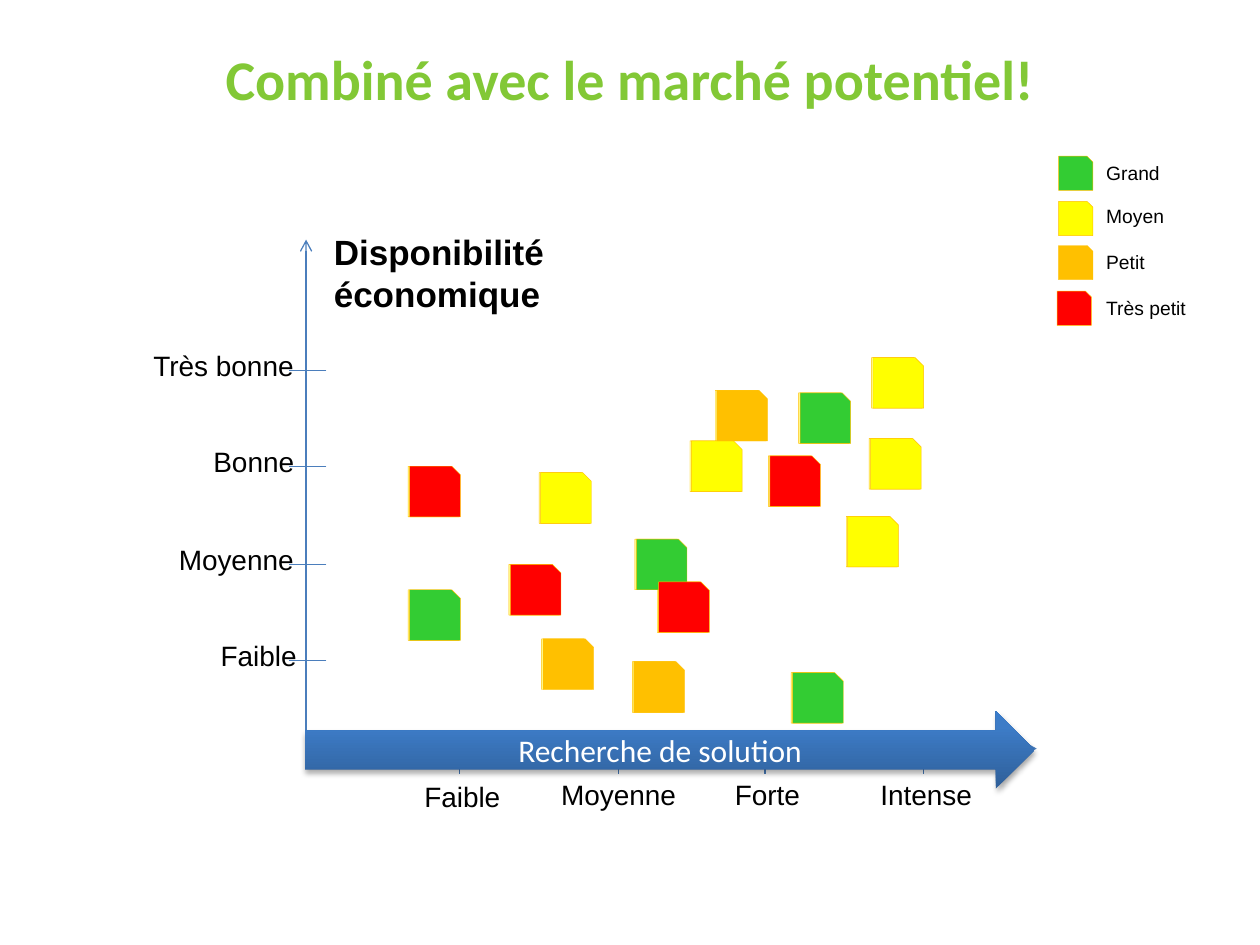
from copy import deepcopy

from lxml import etree
from pptx import Presentation
from pptx.dml.color import RGBColor
from pptx.enum.shapes import MSO_CONNECTOR, MSO_SHAPE
from pptx.enum.text import MSO_ANCHOR, PP_ALIGN
from pptx.oxml import parse_xml
from pptx.oxml.ns import nsdecls, qn
from pptx.util import Cm, Pt

SNIPPED = MSO_SHAPE.SNIP_1_RECTANGLE
RIGHT_ARROW = MSO_SHAPE.RIGHT_ARROW
STRAIGHT = MSO_CONNECTOR.STRAIGHT
MIDDLE = MSO_ANCHOR.MIDDLE
LEFT, CENTER, RIGHT = PP_ALIGN.LEFT, PP_ALIGN.CENTER, PP_ALIGN.RIGHT

TITLE_GREEN = RGBColor(0x82, 0xC8, 0x36)
PALE = RGBColor(0xFF, 0xFF, 0x99)
GREEN = RGBColor(0x33, 0xCC, 0x33)
YELLOW = RGBColor(0xFF, 0xFF, 0x00)
ORANGE = RGBColor(0xFF, 0xC0, 0x00)
RED = RGBColor(0xFF, 0x00, 0x00)
BLUE = RGBColor(0x4B, 0x7E, 0xBC)
BLACK = RGBColor(0x00, 0x00, 0x00)
WHITE = RGBColor(0xFF, 0xFF, 0xFF)
ARROW_STOPS = [
    (0, RGBColor(0x2F, 0x5F, 0x99)),
    (0.8, RGBColor(0x3D, 0x7C, 0xC7)),
    (1, RGBColor(0x3A, 0x7C, 0xCB)),
]


def add_note(group, left, top, size, color):
    note = group.shapes.add_shape(SNIPPED, Cm(left), Cm(top), Cm(size), Cm(size))
    note.shadow.inherit = False
    note.fill.solid()
    note.fill.fore_color.rgb = color
    note.line.color.rgb = ORANGE
    note.line.width = Pt(0.25)


def add_label(shapes, lines, left, top, width, height, size, align=LEFT, bold=False):
    box = shapes.add_textbox(Cm(left), Cm(top), Cm(width), Cm(height))
    box.text_frame.word_wrap = True
    paragraph = box.text_frame.paragraphs[0]
    paragraph.alignment = align
    paragraph.space_after = Pt(6)
    for index, line in enumerate(lines):
        if index:
            paragraph.add_line_break()
        run = paragraph.add_run()
        run.text = line
        run.font.name = "Arial"
        run.font.size = Pt(size)
        run.font.bold = bold
        run.font.color.rgb = BLACK


presentation = Presentation()
presentation.slide_width, presentation.slide_height = Cm(25.4), Cm(19.05)
slide = presentation.slides.add_slide(presentation.slide_layouts[5])
shapes = slide.shapes

# Title
title = shapes.title
title.left, title.top, title.width, title.height = Cm(1.27), Cm(0.76), Cm(22.86), Cm(1.63)
title.text_frame.vertical_anchor = MIDDLE
paragraph = title.text_frame.paragraphs[0]
paragraph.alignment = CENTER
run = paragraph.add_run()
run.text = "Combiné avec le marché potentiel!"
run.font.name = "Calibri"
run.font.size = Pt(32)
run.font.bold = True
run.font.color.rgb = TITLE_GREEN

# Notes on the map: left, top, colour by market size
notes = [
    (13.94, 8.89, YELLOW), (16.13, 7.92, GREEN), (15.52, 9.19, RED),
    (12.83, 10.87, GREEN), (17.09, 10.41, YELLOW), (17.55, 8.84, YELLOW),
    (8.26, 9.4, RED), (8.26, 11.89, GREEN), (10.29, 11.38, RED),
    (14.45, 7.87, ORANGE), (10.9, 9.53, YELLOW), (12.78, 13.34, ORANGE),
    (13.28, 11.73, RED), (10.95, 12.88, ORANGE), (17.6, 7.21, YELLOW),
    (15.98, 13.56, GREEN),
]
NOTE_SIZE = 1.02

# Pale notes lying just behind the coloured ones
pale_group = shapes.add_group_shape()
for left, top, color in notes:
    add_note(pale_group, left - 0.03, top, NOTE_SIZE, PALE)

# Axes and ticks
ORIGIN_X, ORIGIN_Y = 6.17, 15.09
x_ticks = [9.27, 12.47, 15.42, 18.62]
y_ticks = [13.31, 11.38, 9.4, 7.47]
lines = [
    (ORIGIN_X, ORIGIN_Y, 20.9, ORIGIN_Y, True),
    (ORIGIN_X, ORIGIN_Y, ORIGIN_X, 4.83, True),
]
lines += [(x, 14.73, x, 15.6, False) for x in x_ticks]
lines += [(6.58, y, 5.82, y, False) for y in y_ticks]
for x1, y1, x2, y2, has_arrow in lines:
    connector = shapes.add_connector(STRAIGHT, Cm(x1), Cm(y1), Cm(x2), Cm(y2))
    connector.line.color.rgb = BLUE
    connector.line.width = Pt(0.75)
    properties = connector._element.spPr
    if has_arrow:
        etree.SubElement(properties.find(qn("a:ln")), qn("a:tailEnd"), type="arrow")
    etree.SubElement(properties, qn("a:effectLst"))

# Axis labels
add_label(shapes, ["Disponibilité", "économique"], 6.48, 4.52, 11.07, 2.9, 20, bold=True)
x_labels = [("Faible", 6.68, 15.6), ("Moyenne", 9.83, 15.54),
            ("Forte", 12.83, 15.54), ("Intense", 16.03, 15.54)]
for text, left, top in x_labels:
    add_label(shapes, [text], left, top, 5.28, 1.32, 16, CENTER)
y_labels = [("Faible", 3.23, 3), ("Moyenne", 2.46, 3.71),
            ("Bonne", 3.18, 3), ("Très bonne", 2.16, 4.01)]
for (text, left, width), tick in zip(y_labels, y_ticks):
    add_label(shapes, [text], left, tick - 0.56, width, 1.32, 16, RIGHT)

# Coloured notes
note_group = shapes.add_group_shape()
for left, top, color in notes:
    add_note(note_group, left, top, NOTE_SIZE, color)

# Legend: text, colour, note left and top, text top and width
legend_group = shapes.add_group_shape()
legend = [
    ("Grand", GREEN, 21.34, 3.15, 3.12, 2.06),
    ("Moyen", YELLOW, 21.34, 4.06, 3.99, 2.06),
    ("Petit", ORANGE, 21.34, 4.95, 4.93, 2.06),
    ("Très petit", RED, 21.31, 5.87, 5.84, 2.69),
]
for text, color, left, note_top, text_top, width in legend:
    add_note(legend_group, left, note_top, 0.69, color)
    add_label(legend_group.shapes, [text], 22.05, text_top, width, 0.91, 11)

# Horizontal axis arrow with gradient and soft shadow
arrow = shapes.add_shape(RIGHT_ARROW, Cm(6.15), Cm(14.33), Cm(14.71), Cm(1.57))
arrow.fill.gradient()
arrow.fill.gradient_angle = 90
stop_list = arrow._element.spPr.find(qn("a:gradFill")).find(qn("a:gsLst"))
stop_list.append(deepcopy(stop_list[-1]))
for stop, (position, color) in zip(arrow.fill.gradient_stops, ARROW_STOPS):
    stop.position = position
    stop.color.rgb = color
arrow.line.fill.background()
arrow.shadow.inherit = False
arrow._element.spPr.find(qn("a:effectLst")).append(parse_xml(
    f'<a:outerShdw {nsdecls("a")} blurRad="{Pt(3.1)}" dist="{Pt(1.8)}" dir="5400000" '
    'rotWithShape="0"><a:srgbClr val="000000"><a:alpha val="35000"/></a:srgbClr></a:outerShdw>'
))
arrow.text_frame.vertical_anchor = MIDDLE
paragraph = arrow.text_frame.paragraphs[0]
paragraph.alignment = CENTER
run = paragraph.add_run()
run.text = "Recherche de solution"
run.font.name = "Calibri"
run.font.size = Pt(18)
run.font.color.rgb = WHITE

presentation.save("out.pptx")
